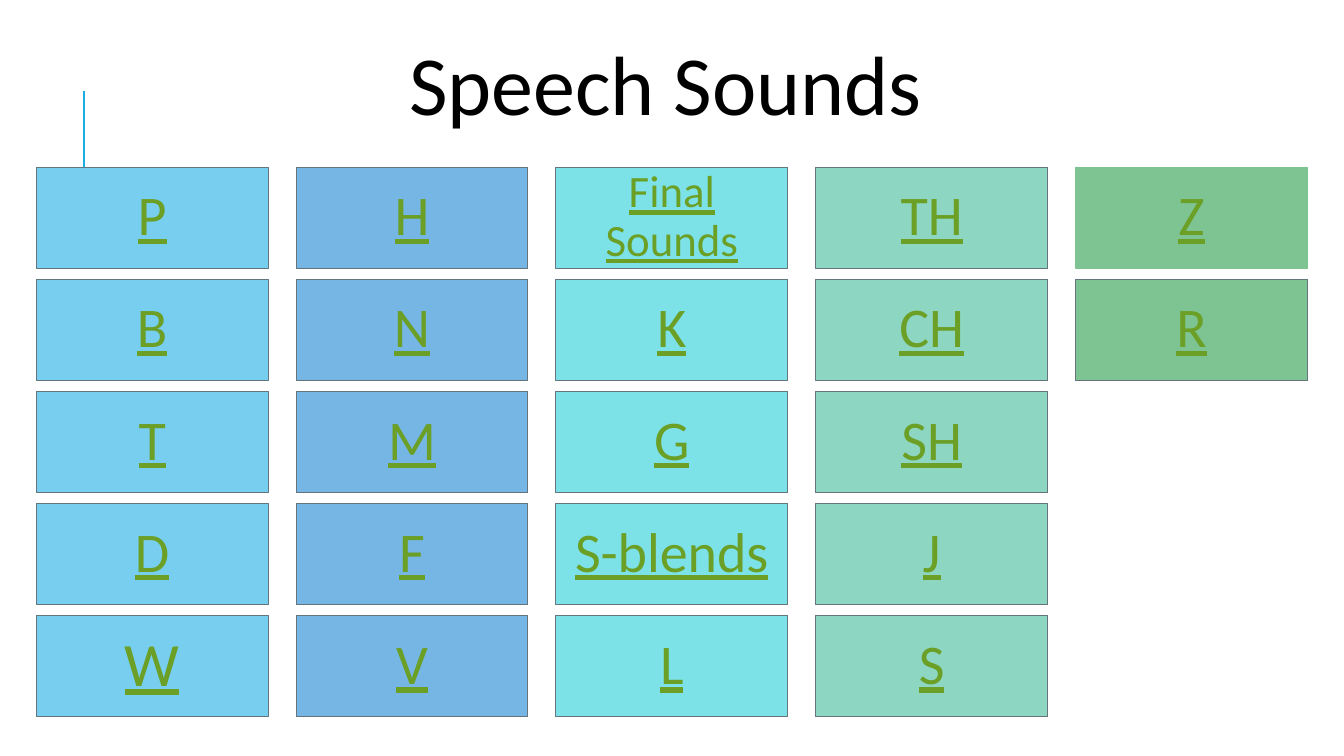
from lxml.etree import SubElement
from pptx import Presentation
from pptx.dml.color import RGBColor
from pptx.enum.shapes import MSO_CONNECTOR, MSO_SHAPE
from pptx.enum.text import MSO_ANCHOR, MSO_AUTO_SIZE, PP_ALIGN
from pptx.oxml.ns import qn
from pptx.util import Pt

BLACK = RGBColor(0x00, 0x00, 0x00)
BLUE = RGBColor(0x1C, 0xAD, 0xE4)
OLIVE = RGBColor(0x6B, 0x9F, 0x25)
SLATE = RGBColor(0x65, 0x75, 0x7D)
SKY = RGBColor(0x77, 0xCE, 0xEF)
DENIM = RGBColor(0x75, 0xB6, 0xE5)
AQUA = RGBColor(0x7D, 0xE2, 0xE7)
MINT = RGBColor(0x8D, 0xD6, 0xC1)
GREEN = RGBColor(0x7E, 0xC4, 0x92)

# Tile grid, in points
LEFT, TOP = 25.9, 119.5
WIDTH, HEIGHT = 165.6, 72
STEP_X, STEP_Y = 185.6, 80.1

COLUMNS = [
    (SKY, ["P", "B", "T", "D", "W"]),
    (DENIM, ["H", "N", "M", "F", "V"]),
    (AQUA, ["Final Sounds", "K", "G", "S-blends", "L"]),
    (MINT, ["TH", "CH", "SH", "J", "S"]),
    (GREEN, ["Z", "R"]),
]
SIZES = {"W": 44, "Final Sounds": 32}
EDGES = {"Z": GREEN}


def write(frame, text, size, color, under=None, align=None, space=None, after=None):
    frame.word_wrap = True
    para = frame.paragraphs[0]
    para.alignment = align
    para.line_spacing = space
    para.space_after = after
    run = para.add_run()
    run.text = text
    run.font.name = "Calibri"
    run.font.size = Pt(size)
    run.font.color.rgb = color
    run.font.underline = under


deck = Presentation()
deck.slide_width, deck.slide_height = Pt(960), Pt(540)
slide = deck.slides.add_slide(deck.slide_layouts[6])
shapes = slide.shapes

# Accent line, partly behind the first tile
line = shapes.add_connector(MSO_CONNECTOR.STRAIGHT, Pt(60), Pt(136.8), Pt(60), Pt(64.8))
line.line.color.rgb = BLUE
line.line.width = Pt(1.5)
SubElement(line._element.spPr, qn("a:effectLst"))

# Sound tiles
for col, (fill, sounds) in enumerate(COLUMNS):
    for row, sound in enumerate(sounds):
        tile = shapes.add_shape(
            MSO_SHAPE.RECTANGLE,
            Pt(LEFT + col * STEP_X), Pt(TOP + row * STEP_Y), Pt(WIDTH), Pt(HEIGHT),
        )
        tile.shadow.inherit = False
        tile.fill.solid()
        tile.fill.fore_color.rgb = fill
        tile.line.color.rgb = EDGES.get(sound, SLATE)
        tile.line.width = Pt(0.75)
        frame = tile.text_frame
        frame.vertical_anchor = MSO_ANCHOR.MIDDLE
        frame.margin_left = frame.margin_right = Pt(3.6)
        frame.margin_top = frame.margin_bottom = Pt(3.6)
        write(frame, sound, SIZES.get(sound, 40), OLIVE, under=True,
              align=PP_ALIGN.CENTER, space=0.9, after=Pt(2))

# Title
title = shapes.add_textbox(Pt(285.1), Pt(18.7), Pt(447.8), Pt(79.9))
title.text_frame.auto_size = MSO_AUTO_SIZE.SHAPE_TO_FIT_TEXT
write(title.text_frame, "Speech Sounds", 60, BLACK)

deck.save("out.pptx")
